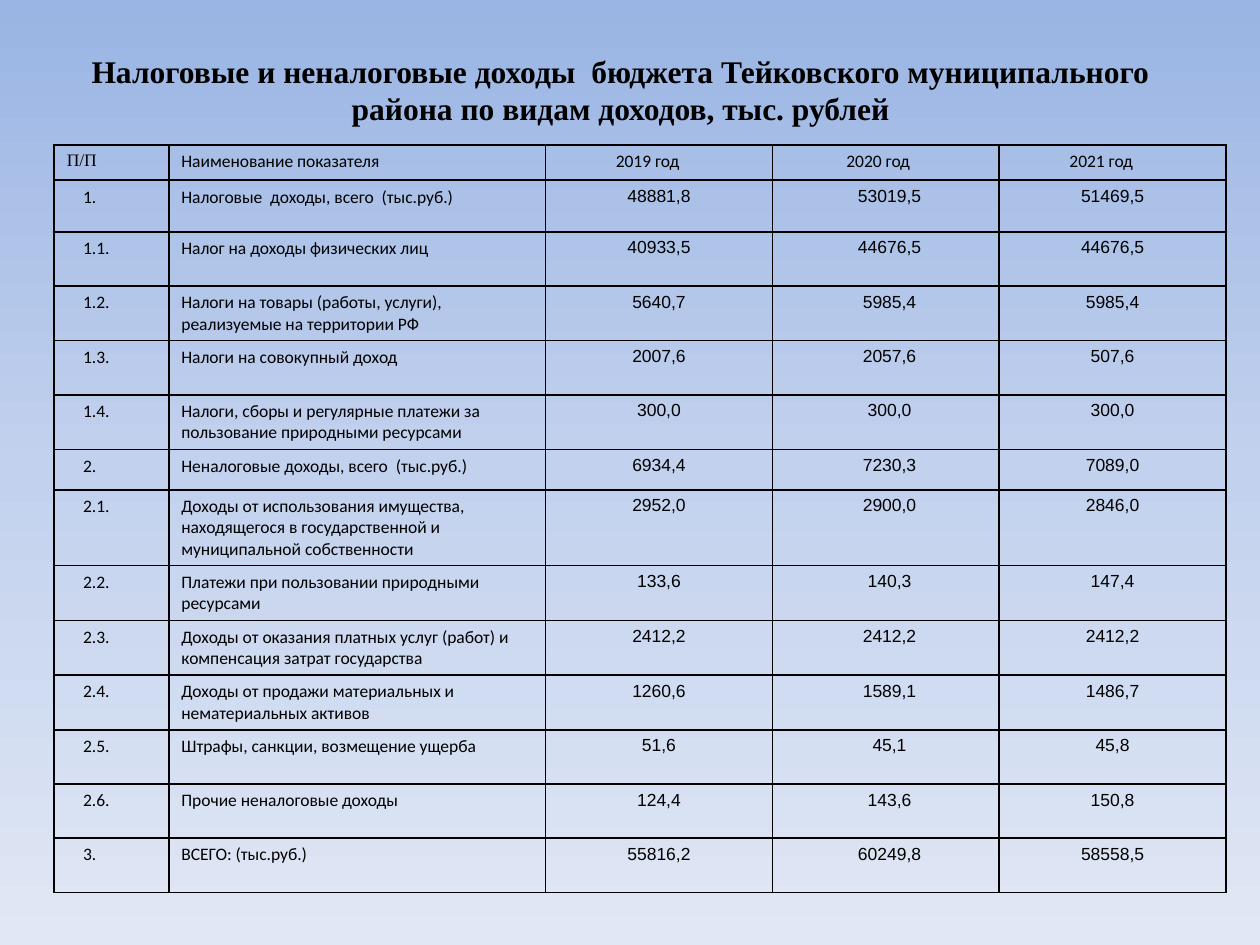
"""Build a slide with a table of district budget revenues by type."""
from copy import deepcopy
from dataclasses import dataclass

from pptx import Presentation
from pptx.dml.color import RGBColor
from pptx.enum.text import MSO_ANCHOR, PP_ALIGN
from pptx.oxml import parse_xml
from pptx.oxml.ns import nsdecls
from pptx.util import Inches, Pt


@dataclass(frozen=True)
class Theme:
    ink: str = "000000"
    background: tuple = ((0, "9AB5E4"), (0.5, "C2D1ED"), (1, "E1E8F5"))
    title_font: str = "Times New Roman"
    label_font: str = "Calibri"
    value_font: str = "Arial"
    title_size: int = 18
    table_size: int = 10
    border_width: int = 1


TITLE = ("Налоговые и неналоговые доходы  бюджета Тейковского "
         "муниципального района по видам доходов, тыс. рублей")
HEADER = ("П/П", "Наименование показателя", "2019 год", "2020 год", "2021 год")
REVENUES = (
    ("1.", "Налоговые  доходы, всего  (тыс.руб.)", "48881,8", "53019,5", "51469,5"),
    ("1.1.", "Налог на доходы физических лиц", "40933,5", "44676,5", "44676,5"),
    ("1.2.", "Налоги на товары (работы, услуги), реализуемые на территории РФ",
     "5640,7", "5985,4", "5985,4"),
    ("1.3.", "Налоги на совокупный доход", "2007,6", "2057,6", "507,6"),
    ("1.4.", "Налоги, сборы и регулярные платежи за пользование природными ресурсами",
     "300,0", "300,0", "300,0"),
    ("2.", "Неналоговые доходы, всего  (тыс.руб.)", "6934,4", "7230,3", "7089,0"),
    ("2.1.", "Доходы от использования имущества, находящегося в государственной "
     "и муниципальной собственности", "2952,0", "2900,0", "2846,0"),
    ("2.2.", "Платежи при пользовании природными ресурсами", "133,6", "140,3", "147,4"),
    ("2.3.", "Доходы от оказания платных услуг (работ) и компенсация затрат государства",
     "2412,2", "2412,2", "2412,2"),
    ("2.4.", "Доходы от продажи материальных и нематериальных активов",
     "1260,6", "1589,1", "1486,7"),
    ("2.5.", "Штрафы, санкции, возмещение ущерба", "51,6", "45,1", "45,8"),
    ("2.6.", "Прочие неналоговые доходы", "124,4", "143,6", "150,8"),
    ("3.", "ВСЕГО: (тыс.руб.)", "55816,2", "60249,8", "58558,5"),
)
COLUMN_WIDTHS = (0.91, 2.99, 1.8, 1.8, 1.8)
ROW_HEIGHT = 0.43
SPECIAL_HEIGHTS = {0: 0.28, 1: 0.41, 6: 0.32, 7: 0.6}
NUMBER_INDENT = 0.13
VALUE_INDENTS = {2: 0, 3: 0.06, 4: 0}
YEAR_RIGHT_MARGIN = 0.28


class SlideBuilder:
    """Draw styled elements on the current slide."""

    def __init__(self, slide, theme):
        self.slide = slide
        self.theme = theme

    def add_background(self):
        fill = self.slide.background.fill
        fill.gradient()
        fill.gradient_angle = 270
        stop_list = self.slide._element.xpath(".//a:gsLst")[0]
        stop_list.insert(1, deepcopy(stop_list[0]))
        for stop, (position, color) in zip(fill.gradient_stops, self.theme.background):
            stop.position = position
            stop.color.rgb = RGBColor.from_string(color)

    def style_text(self, paragraph, font_name, size, bold=False):
        for run in paragraph.runs:
            run.font.name = font_name
            run.font.size = Pt(size)
            run.font.bold = bold
            run.font.color.rgb = RGBColor.from_string(self.theme.ink)

    def add_title(self, text, left, top, width, height):
        box = self.slide.shapes.add_textbox(
            Inches(left), Inches(top), Inches(width), Inches(height))
        text_frame = box.text_frame
        text_frame.word_wrap = True
        text_frame.vertical_anchor = MSO_ANCHOR.MIDDLE
        text_frame.text = text
        paragraph = text_frame.paragraphs[0]
        paragraph.alignment = PP_ALIGN.CENTER
        self.style_text(paragraph, self.theme.title_font, self.theme.title_size, True)

    def add_borders(self, cell):
        properties = cell._tc.get_or_add_tcPr()
        for index, side in enumerate(("lnL", "lnR", "lnT", "lnB")):
            properties.insert(index, parse_xml(
                f'<a:{side} {nsdecls("a")} w="{Pt(self.theme.border_width)}">'
                f'<a:solidFill><a:srgbClr val="{self.theme.ink}"/></a:solidFill>'
                f'</a:{side}>'))

    def fill_cell(self, cell, text, row, column):
        cell.fill.background()
        self.add_borders(cell)
        cell.text_frame.text = text
        paragraph = cell.text_frame.paragraphs[0]
        font_name = self.theme.label_font
        if row == column == 0:
            font_name = self.theme.title_font
        else:
            paragraph.space_before = Pt(self.theme.table_size * 0.2)
        if column == 0 and row:
            cell.margin_left = Inches(0.1 + NUMBER_INDENT)
        if column in VALUE_INDENTS:
            paragraph.alignment = PP_ALIGN.CENTER
            cell.margin_left = Inches(0.1 + VALUE_INDENTS[column])
            if row:
                font_name = self.theme.value_font
            else:
                cell.margin_right = Inches(YEAR_RIGHT_MARGIN)
        self.style_text(paragraph, font_name, self.theme.table_size)

    def add_table(self, rows, left, top):
        heights = [SPECIAL_HEIGHTS.get(row, ROW_HEIGHT) for row in range(len(rows))]
        table = self.slide.shapes.add_table(
            len(rows), len(COLUMN_WIDTHS), Inches(left), Inches(top),
            Inches(sum(COLUMN_WIDTHS)), Inches(sum(heights))).table
        table.first_row = False
        table.horz_banding = False
        for column, width in zip(table.columns, COLUMN_WIDTHS):
            column.width = Inches(width)
        for row, (values, height) in enumerate(zip(rows, heights)):
            table.rows[row].height = Inches(height)
            for column, text in enumerate(values):
                self.fill_cell(table.cell(row, column), text, row, column)


def main():
    presentation = Presentation()
    presentation.slide_width = Inches(10)
    presentation.slide_height = Inches(7.5)
    slide = presentation.slides.add_slide(presentation.slide_layouts[6])
    builder = SlideBuilder(slide, Theme())
    builder.add_background()
    builder.add_title(TITLE, 0.43, 0, 8.99, 1.42)
    builder.add_table((HEADER, *REVENUES), 0.43, 1.15)
    presentation.save("out.pptx")


if __name__ == "__main__":
    main()
